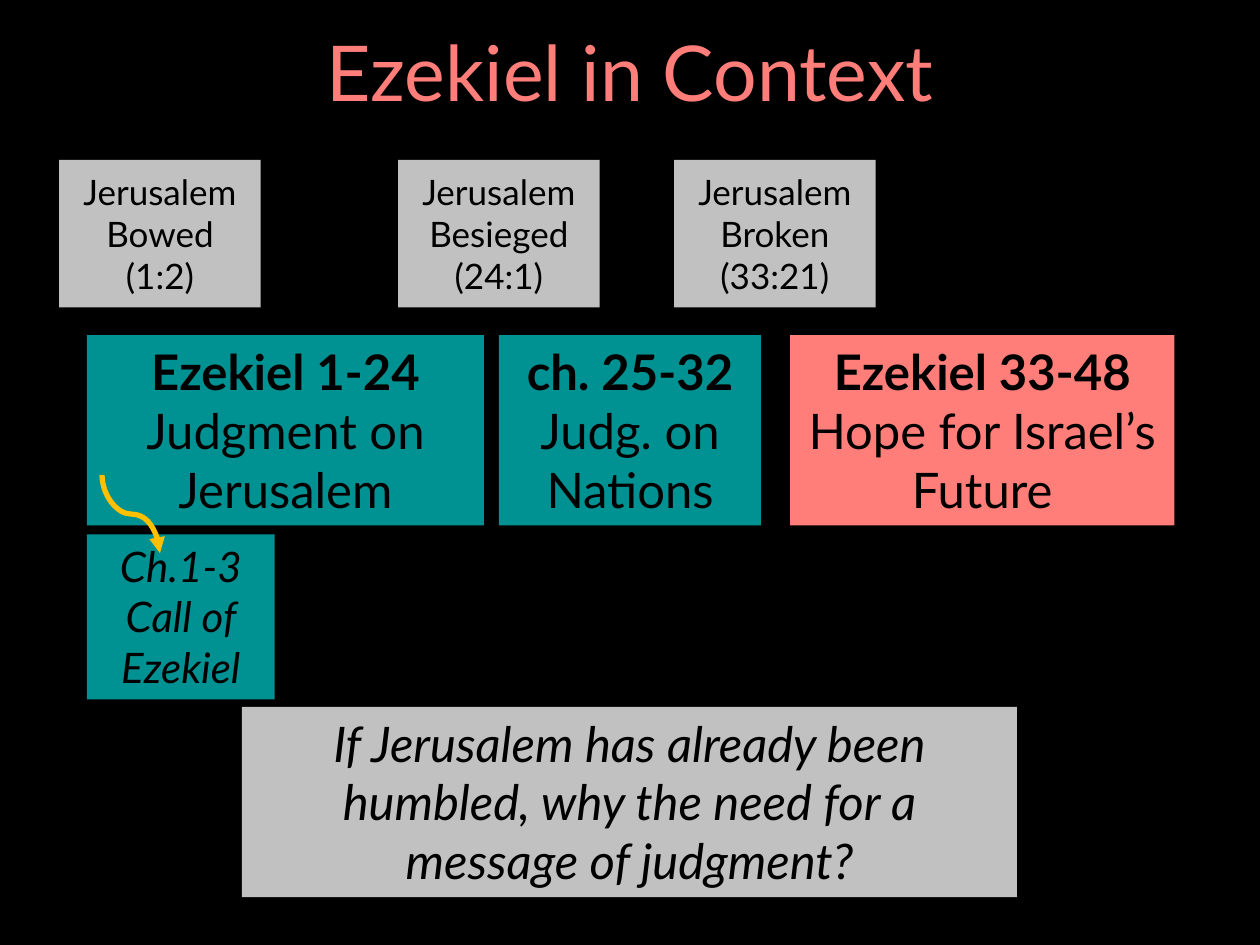
from lxml import etree
from pptx import Presentation, util as u
from pptx.dml.color import RGBColor
from pptx.enum import shapes, text
from pptx.oxml.ns import qn

COLORS = {"background": "000000", "ink": "000000", "hope": "FF7E79",
          "judgment": "009193", "event": "C1C1C1", "arrow": "FFC000"}
FONT = "Lato"
COLUMNS, ROWS = 100, 75  # slide grid; all boxes are (column, row, columns, rows)

deck = Presentation()
deck.slide_width, deck.slide_height = u.Inches(10), u.Inches(7.5)


def col(n):
    return round(deck.slide_width * n / COLUMNS)


def row(n):
    return round(deck.slide_height * n / ROWS)


def color(name):
    return RGBColor.from_string(COLORS[name])


def add_line(paragraph, words, size, ink="ink", bold=False, italic=False):
    paragraph.alignment = text.PP_ALIGN.CENTER
    run = paragraph.add_run()
    run.text = words
    font = run.font
    font.name, font.size = FONT, u.Pt(size)
    font.bold, font.italic = bold, italic
    font.color.rgb = color(ink)


def add_panel(slide, box, fill, lines, size, italic=False, grow=True):
    """Filled rectangle; lines are (words, bold) pairs, one paragraph each."""
    left, top, width, height = box
    panel = slide.shapes.add_shape(shapes.MSO_SHAPE.RECTANGLE,
                                   col(left), row(top), col(width), row(height))
    panel.shadow.inherit = False
    panel.fill.solid()
    panel.fill.fore_color.rgb = color(fill)
    panel.line.fill.background()
    frame = panel.text_frame
    frame.word_wrap = True
    if grow:
        frame.auto_size = text.MSO_AUTO_SIZE.SHAPE_TO_FIT_TEXT
        frame.vertical_anchor = text.MSO_ANCHOR.TOP
    else:
        frame.vertical_anchor = text.MSO_ANCHOR.MIDDLE
    for i, (words, bold) in enumerate(lines):
        paragraph = frame.add_paragraph() if i else frame.paragraphs[0]
        add_line(paragraph, words, size, bold=bold, italic=italic)


def add_title(slide, box):
    left, top, width, height = box
    title = slide.shapes.title
    title.left, title.top = col(left), row(top)
    title.width, title.height = col(width), row(height)
    title.text_frame.vertical_anchor = text.MSO_ANCHOR.MIDDLE
    heading = title.text_frame.paragraphs[0]
    heading.line_spacing = 0.9
    add_line(heading, "Ezekiel in Context", 44, ink="hope")


def add_sections(slide, box):
    """Three divisions of the book, side by side."""
    left, top, _, height = box
    sections = [
        (0, 31.5, "judgment", "Ezekiel 1-24", "Judgment on Jerusalem"),
        (32.7, 20.8, "judgment", "ch. 25-32", "Judg. on Nations"),
        (55.8, 30.5, "hope", "Ezekiel 33-48", "Hope for Israel’s Future"),
    ]
    for offset, width, fill, chapters, theme in sections:
        add_panel(slide, (left + offset, top, width, height), fill,
                  [(chapters, True), (theme, False)], 28)


def add_events(slide, box):
    """Jerusalem's fall in three stages, above the sections."""
    left, top, _, height = box
    events = [(0, "Bowed", "1:2"), (26.9, "Besieged", "24:1"), (48.8, "Broken", "33:21")]
    for offset, stage, verse in events:
        add_panel(slide, (left + offset, top, 16, height), "event",
                  [(f"Jerusalem {stage}", False), (f"({verse})", False)], 20, grow=False)


def add_call_arrow(slide, box):
    """S-curve that leaves and arrives vertically: a curve turned by 270 degrees."""
    left, top, width, height = box
    middle_x, middle_y = left + width / 2, top + height / 2
    arrow = slide.shapes.add_connector(
        shapes.MSO_CONNECTOR.CURVE,
        col(middle_x + height / 2), row(middle_y - width / 2),
        col(middle_x - height / 2), row(middle_y + width / 2))
    arrow.line.color.rgb = color("arrow")
    arrow.line.width = u.Pt(3)
    properties = arrow._element.spPr
    properties.find(qn("a:xfrm")).set("rot", str(270 * 60000))
    etree.SubElement(properties.find(qn("a:ln")), qn("a:tailEnd"), type="triangle")
    etree.SubElement(properties, qn("a:effectLst"))


def main():
    slide = deck.slides.add_slide(deck.slide_layouts[5])
    slide.background.fill.solid()
    slide.background.fill.fore_color.rgb = color("background")

    add_title(slide, (6.9, 1.6, 86.2, 9))
    add_sections(slide, (6.9, 26.6, 86.3, 15.1))
    add_events(slide, (4.7, 12.7, 64.8, 11.7))
    # Closing question
    add_panel(slide, (19.2, 56.1, 61.5, 15.1), "event",
              [("If Jerusalem has already been humbled, why the need for a "
                "message of judgment?", False)], 28, italic=True)
    # Call of Ezekiel, below the first section
    add_panel(slide, (6.9, 42.4, 14.9, 13.1), "judgment",
              [("Ch.1-3 Call of Ezekiel", False)], 24, italic=True)
    add_call_arrow(slide, (8.1, 37.7, 4.6, 6.2))
    deck.save("out.pptx")


if __name__ == "__main__":
    main()
